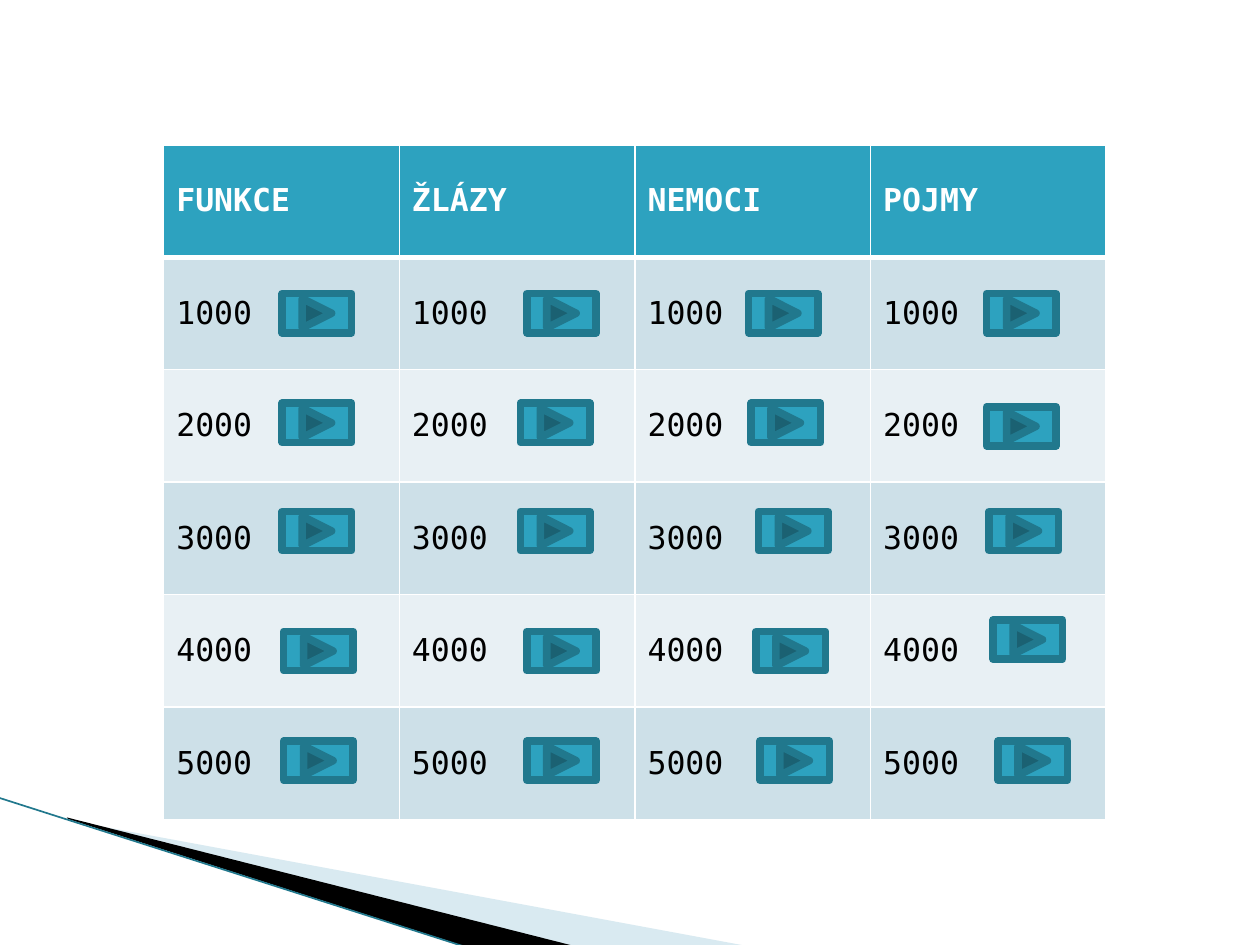
from dataclasses import dataclass
from typing import NamedTuple

from lxml.etree import SubElement
from pptx import Presentation
from pptx.dml.color import RGBColor
from pptx.enum.shapes import MSO_CONNECTOR as Connector, MSO_SHAPE as Shape
from pptx.enum.text import MSO_ANCHOR as Anchor
from pptx.oxml.ns import qn
from pptx.util import Cm, Pt


@dataclass(frozen=True)
class Theme:
    font: str = "DejaVu Sans Mono"
    text_size: float = 18
    accent: str = "2DA2BF"
    accent_dark: str = "21788D"
    band_dark: str = "CDE0E8"
    band_light: str = "E8F0F4"
    wedge: str = "A0CBDC"
    white: str = "FFFFFF"
    black: str = "000000"
    grid_width: float = 1
    header_rule: float = 3
    button_line: float = 4.33
    edge_width: float = 0.95


class Point(NamedTuple):
    x: float
    y: float


class Wedge(NamedTuple):
    points: tuple
    color: str
    opacity: int


class Category(NamedTuple):
    title: str
    buttons: tuple


THEME = Theme()
TABLE_LEFT, TABLE_TOP = 3.3, 2.92
TABLE_WIDTH, TABLE_HEIGHT = 19, 13.6
BUTTON_WIDTH, BUTTON_HEIGHT = 1.4, 0.79
SCORES = ("1000", "2000", "3000", "4000", "5000")

CATEGORIES = (
    Category("FUNKCE", (Point(5.69, 5.92), Point(5.69, 8.13), Point(5.69, 10.31),
                        Point(5.72, 12.73), Point(5.72, 14.94))),
    Category("ŽLÁZY", (Point(10.62, 5.92), Point(10.49, 8.13), Point(10.49, 10.31),
                       Point(10.62, 12.73), Point(10.62, 14.94))),
    Category("NEMOCI", (Point(15.09, 5.92), Point(15.14, 8.13), Point(15.29, 10.31),
                        Point(15.24, 12.73), Point(15.32, 14.94))),
    Category("POJMY", (Point(19.89, 5.92), Point(19.89, 8.2), Point(19.94, 10.31),
                       Point(20.02, 12.5), Point(20.12, 14.94))),
)

WEDGES = (
    Wedge((Point(1.4, 16.54), Point(15.11, 19.08), Point(11.58, 19.08), Point(1.4, 16.51)),
          THEME.wedge, 40),
    Wedge((Point(1.35, 16.48), Point(11.61, 19.08), Point(9.45, 19.1), Point(1.37, 16.51)),
          THEME.black, 100),
)


def paint(fill, color: str, opacity: int = 100) -> None:
    fill.solid()
    fill.fore_color.rgb = RGBColor.from_string(color)
    if opacity < 100:
        SubElement(fill._xPr.find(f".//{qn('a:srgbClr')}"), qn("a:alpha"),
                   val=str(opacity * 1000))


def write(frame, text: str, *, color: str, bold: bool = False,
          size: float = THEME.text_size, font: str = THEME.font) -> None:
    span = frame.paragraphs[0].add_run()
    span.text = text
    span.font.name = font
    span.font.size = Pt(size)
    span.font.bold = bold
    span.font.color.rgb = RGBColor.from_string(color)


def add_borders(cell, top: float, bottom: float) -> None:
    properties = cell._tc.get_or_add_tcPr()
    widths = {"lnL": THEME.grid_width, "lnR": THEME.grid_width, "lnT": top, "lnB": bottom}
    for side, width in widths.items():
        line = SubElement(properties, qn(f"a:{side}"), w=str(Pt(width)))
        SubElement(SubElement(line, qn("a:solidFill")), qn("a:srgbClr"), val=THEME.white)


def add_wedge(page, wedge: Wedge) -> None:
    start, *rest = [(Cm(point.x), Cm(point.y)) for point in wedge.points]
    builder = page.shapes.build_freeform(*start)
    builder.add_line_segments(rest, close=True)
    shape = builder.convert_to_shape()
    shape.shadow.inherit = False
    shape.line.fill.background()
    paint(shape.fill, wedge.color, wedge.opacity)


def add_edge(page, start: Point, end: Point) -> None:
    edge = page.shapes.add_connector(
        Connector.STRAIGHT, Cm(start.x), Cm(start.y), Cm(end.x), Cm(end.y))
    paint(edge.line.fill, THEME.accent_dark)
    edge.line.width = Pt(THEME.edge_width)
    SubElement(edge._element.spPr, qn("a:effectLst"))


def add_score_table(page) -> None:
    rows = [[category.title for category in CATEGORIES]]
    rows += [[score] * len(CATEGORIES) for score in SCORES]
    table = page.shapes.add_table(
        len(rows), len(CATEGORIES), Cm(TABLE_LEFT), Cm(TABLE_TOP),
        Cm(TABLE_WIDTH), Cm(TABLE_HEIGHT)).table
    for row_index, texts in enumerate(rows):
        table.rows[row_index].height = Cm(TABLE_HEIGHT / len(rows))
        header = row_index == 0
        band = THEME.band_dark if row_index % 2 else THEME.band_light
        for column_index, text in enumerate(texts):
            cell = table.cell(row_index, column_index)
            add_borders(cell,
                        top=THEME.header_rule if row_index == 1 else THEME.grid_width,
                        bottom=THEME.header_rule if header else THEME.grid_width)
            paint(cell.fill, THEME.accent if header else band)
            cell.vertical_anchor = Anchor.MIDDLE
            write(cell.text_frame, text, bold=header,
                  color=THEME.white if header else THEME.black)


def add_button(page, corner: Point) -> None:
    button = page.shapes.add_shape(
        Shape.ACTION_BUTTON_FORWARD_OR_NEXT, Cm(corner.x), Cm(corner.y),
        Cm(BUTTON_WIDTH), Cm(BUTTON_HEIGHT))
    button.shadow.inherit = False
    paint(button.fill, THEME.accent)
    paint(button.line.fill, THEME.accent_dark)
    button.line.width = Pt(THEME.button_line)


def main() -> None:
    deck = Presentation()
    deck.slide_width, deck.slide_height = Cm(25.4), Cm(19.05)
    page = deck.slides.add_slide(deck.slide_layouts[6])
    paint(page.background.fill, THEME.white)
    for wedge in WEDGES:
        add_wedge(page, wedge)
    add_edge(page, Point(-0.03, 16.08), Point(9.42, 19.1))
    add_score_table(page)
    for category in CATEGORIES:
        for corner in category.buttons:
            add_button(page, corner)
    deck.save("out.pptx")


if __name__ == "__main__":
    main()
